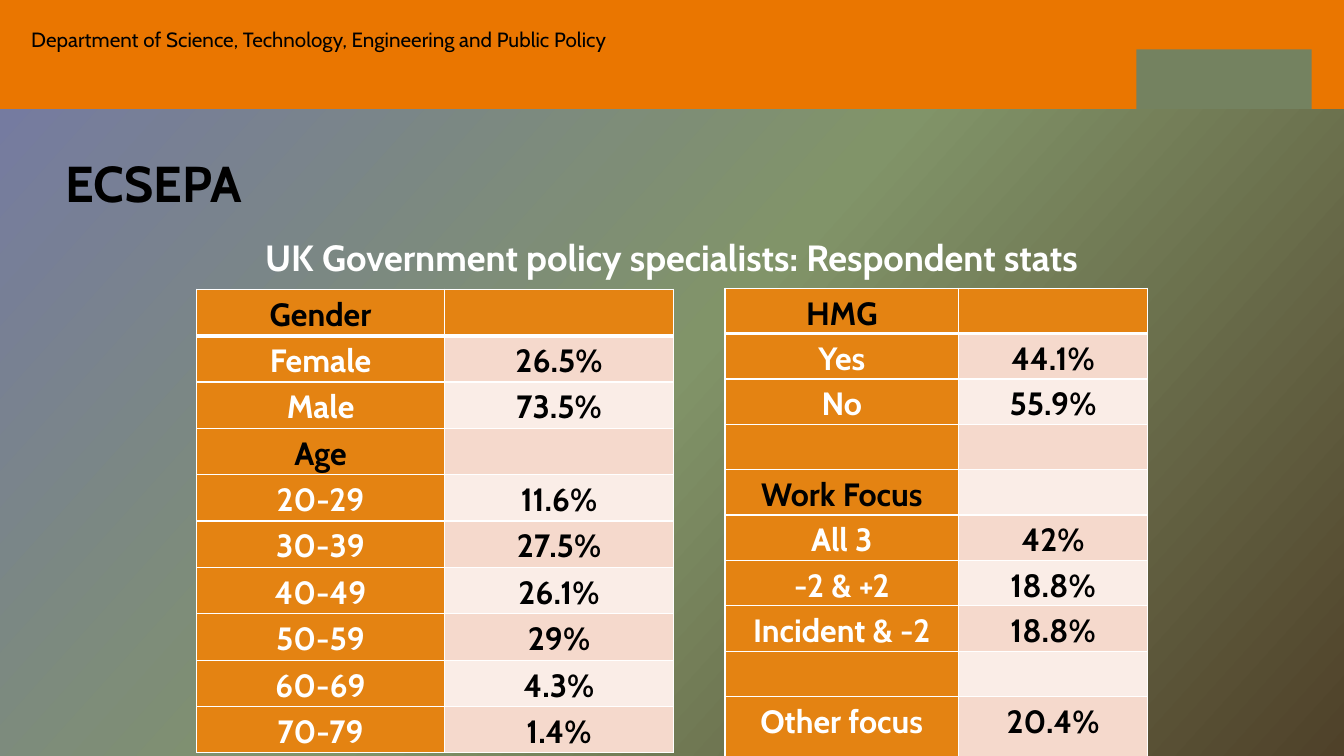
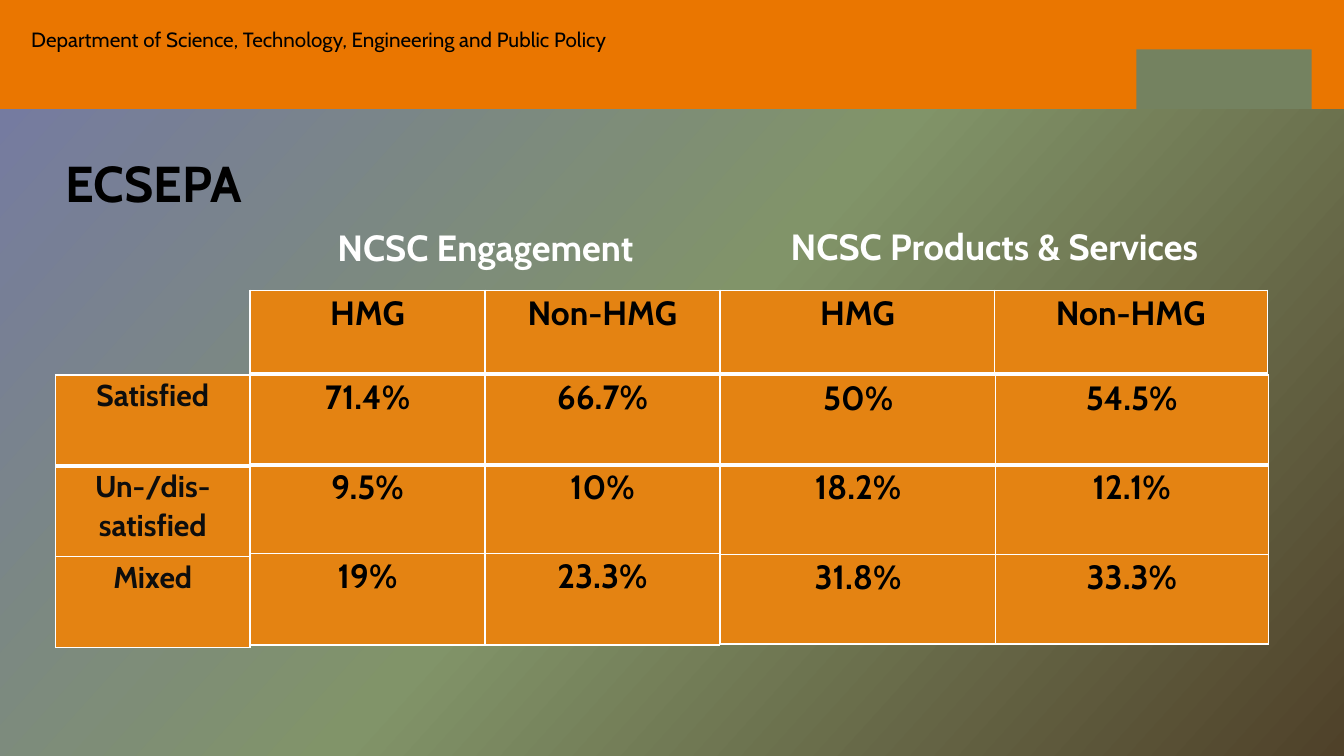
from copy import deepcopy

from lxml import etree
from pptx import Presentation
from pptx.dml.color import RGBColor
from pptx.enum.shapes import MSO_SHAPE
from pptx.enum.text import PP_ALIGN
from pptx.oxml.ns import qn
from pptx.util import Inches, Pt

FONT = "Cabin"
BLACK = RGBColor(0x00, 0x00, 0x00)
NEAR_BLACK = RGBColor(0x0D, 0x0D, 0x0D)
WHITE = RGBColor(0xFF, 0xFF, 0xFF)
BANNER_ORANGE = RGBColor(0xEA, 0x76, 0x00)
CELL_ORANGE = RGBColor(0xE4, 0x83, 0x12)
LOGO_GREEN = RGBColor(0x74, 0x82, 0x60)
BACKGROUND = [
    (0, RGBColor(0x74, 0x78, 0xA6)),
    (0.5, RGBColor(0x81, 0x94, 0x69)),
    (1, RGBColor(0x4F, 0x41, 0x29)),
]
BANDS = [RGBColor(0xFA, 0xED, 0xE7), RGBColor(0xF5, 0xD9, 0xCC)]

CELL_MARGINS = {
    "margin_left": Inches(0.07),
    "margin_right": Inches(0.07),
    "margin_top": 0,
    "margin_bottom": 0,
}
NO_MARGINS = dict.fromkeys(CELL_MARGINS, 0)


def write_text(frame, text, size, color, bold=True, align=PP_ALIGN.CENTER, spacing=1.0):
    frame.word_wrap = True
    paragraph = frame.paragraphs[0]
    paragraph.text = text
    paragraph.alignment = align
    paragraph.line_spacing = spacing
    font_format = {"name": FONT, "size": Pt(size), "bold": bold}
    for name, value in font_format.items():
        setattr(paragraph.font, name, value)
    paragraph.font.color.rgb = color


def add_grid(slide, left, top, widths, heights, rows, size=24, color=BLACK,
             spacing=1.07, banded=False):
    frame = slide.shapes.add_table(
        len(rows), len(widths), Inches(left), Inches(top),
        Inches(sum(widths)), Inches(sum(heights)))
    table = frame.table
    table.first_row = table.horz_banding = False
    for column, width in zip(table.columns, widths):
        column.width = Inches(width)
    for row, height in zip(table.rows, heights):
        row.height = Inches(height)
    for row_index, values in enumerate(rows):
        for column_index, text in enumerate(values):
            cell = table.cell(row_index, column_index)
            for name, value in CELL_MARGINS.items():
                setattr(cell, name, value)
            # In a banded grid, a label without a value is a heading
            is_label = banded and column_index == 0 and values[1]
            write_text(cell.text_frame, text, size, WHITE if is_label else color,
                       spacing=spacing)
            in_band = banded and row_index and column_index
            cell.fill.solid()
            cell.fill.fore_color.rgb = BANDS[row_index % 2] if in_band else CELL_ORANGE
            # Thick rule under the first row, thin ones elsewhere
            borders = {"L": 1, "R": 1, "T": 3 if row_index == 1 else 1,
                       "B": 3 if row_index == 0 else 1}
            properties = cell._tc.get_or_add_tcPr()
            for position, (side, width) in enumerate(borders.items()):
                line = etree.Element(qn(f"a:ln{side}"), w=str(Pt(width)))
                line_fill = etree.SubElement(line, qn("a:solidFill"))
                etree.SubElement(line_fill, qn("a:srgbClr"), val=str(WHITE))
                properties.insert(position, line)


presentation = Presentation()
presentation.slide_width = Inches(13.33)
presentation.slide_height = Inches(7.5)

# Shared gradient background on the master
master = presentation.slide_master
background_fill = master.background.fill
background_fill.gradient()
background_fill.gradient_angle = 360 - 42
stop_list = master.element.find(".//" + qn("a:gsLst"))
stop_list.append(deepcopy(stop_list[-1]))
for stop, (position, color) in zip(background_fill.gradient_stops, BACKGROUND):
    stop.position = position
    stop.color.rgb = color

# Shared banner, department line and title
slides = []
for slide_number in range(2):
    slide = presentation.slides.add_slide(presentation.slide_layouts[6])
    slides.append(slide)
    for left, top, width, height, color in [
        (0, 0, 13.33, 1.08, BANNER_ORANGE),
        (11.27, 0.49, 1.74, 0.59, LOGO_GREEN),
    ]:
        shape = slide.shapes.add_shape(
            MSO_SHAPE.RECTANGLE, Inches(left), Inches(top), Inches(width), Inches(height))
        shape.shadow.inherit = False
        shape.fill.solid()
        shape.fill.fore_color.rgb = color
        shape.line.fill.background()

    department = slide.shapes.add_textbox(Inches(0.31), Inches(0.31), Inches(8), Inches(0.43))
    for name, value in NO_MARGINS.items():
        setattr(department.text_frame, name, value)
    write_text(department.text_frame,
               "Department of Science, Technology, Engineering and Public Policy",
               14.7, BLACK, bold=False, align=PP_ALIGN.LEFT, spacing=0.8)

    title = slide.shapes.add_textbox(Inches(0.55), Inches(1.53), Inches(10.51), Inches(0.7))
    write_text(title.text_frame, "ECSEPA", 36, BLACK, align=PP_ALIGN.LEFT, spacing=0.9)

respondent_slide, satisfaction_slide = slides

# White headings above the tables
for slide, left, top, width, spacing, text in [
    (respondent_slide, 1.41, 2.33, 10.51, 0.9,
     "UK Government policy specialists: Respondent stats"),
    (satisfaction_slide, 2.86, 2.18, 3.91, 1.0, "NCSC Engagement"),
    (satisfaction_slide, 7.36, 2.17, 5.01, 1.0, "NCSC Products & Services"),
]:
    heading = slide.shapes.add_textbox(Inches(left), Inches(top), Inches(width), Inches(0.54))
    write_text(heading.text_frame, text, 26, WHITE, spacing=spacing)

# Respondent statistics
respondents = [
    ("Gender", ""), ("Female", "26.5%"), ("Male", "73.5%"),
    ("Age", ""), ("20-29", "11.6%"), ("30-39", "27.5%"), ("40-49", "26.1%"),
    ("50-59", "29%"), ("60-69", "4.3%"), ("70-79", "1.4%"),
]
work = [
    ("HMG", ""), ("Yes", "44.1%"), ("No", "55.9%"), ("", ""),
    ("Work Focus", ""), ("All 3", "42%"), ("-2 & +2", "18.8%"),
    ("Incident & -2", "18.8%"), ("", ""), ("Other focus", "20.4%"),
]
for left, top, widths, heights, rows in [
    (1.95, 2.87, [2.46, 2.27], [0.46] * 10, respondents),
    (7.19, 2.86, [2.32, 1.87], [0.45] * 9 + [0.68], work),
]:
    add_grid(respondent_slide, left, top, widths, heights, rows,
             size=23, spacing=1.15, banded=True)

# Satisfaction by group: body tables, row labels, then column headers
engagement = [("71.4%", "66.7%"), ("9.5%", "10%"), ("19%", "23.3%")]
products = [("50%", "54.5%"), ("18.2%", "12.1%"), ("31.8%", "33.3%")]
labels = [("Satisfied",), ("Un-/dis-satisfied",), ("Mixed",)]
groups = [("HMG", "Non-HMG")]

add_grid(satisfaction_slide, 2.48, 3.71, [2.33] * 2, [0.9, 0.88, 0.91], engagement)
add_grid(satisfaction_slide, 7.15, 3.72, [2.72, 2.71], [0.89] * 3, products)
add_grid(satisfaction_slide, 0.55, 3.72, [1.93], [0.9] * 3, labels,
         size=21.5, color=NEAR_BLACK)
for left, width in [(2.48, 2.33), (7.15, 2.71)]:
    add_grid(satisfaction_slide, left, 2.88, [width] * 2, [0.83], groups)

presentation.save("out.pptx")
